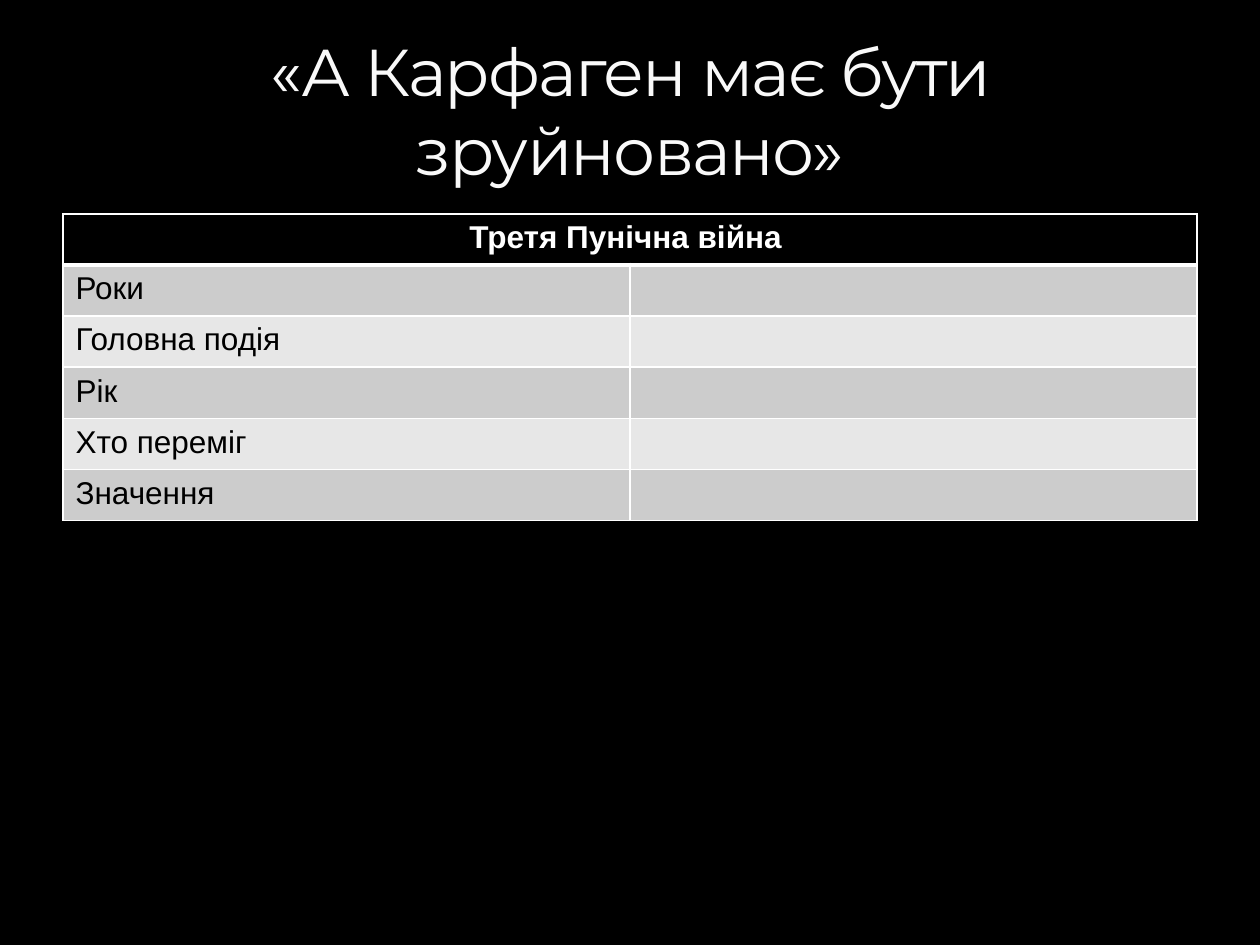
from dataclasses import dataclass

from lxml import etree
from pptx import Presentation
from pptx.dml.color import RGBColor
from pptx.enum.text import MSO_ANCHOR, PP_ALIGN
from pptx.oxml.ns import qn
from pptx.util import Emu, Pt

BOTTOM = MSO_ANCHOR.BOTTOM
LEFT, CENTER = PP_ALIGN.LEFT, PP_ALIGN.CENTER
EMU_PER_PX = 914400 / 126
BLANK_LAYOUT = 6


@dataclass(frozen=True)
class Theme:
    background: str = "000000"
    title: str = "F9F9F9"
    header_text: str = "FFFFFF"
    body_text: str = "000000"
    bands: tuple[str, str] = ("CCCCCC", "E7E7E7")
    border: str = "FFFFFF"
    title_font: str = "Montserrat"
    table_font: str = "Arial"
    title_size: float = 37.8
    table_size: float = 18
    thin_border: float = 1
    thick_border: float = 3


@dataclass(frozen=True)
class Box:
    left: int
    top: int
    width: int
    height: int

    def emu(self) -> tuple[Emu, ...]:
        return tuple(px(n) for n in (self.left, self.top, self.width, self.height))


THEME = Theme()
TITLE_BOX = Box(63, 21, 1134, 174)
TABLE_BOX = Box(63, 214, 1134, 306)
TITLE = "«А Карфаген має бути зруйновано»"
HEADER = "Третя Пунічна війна "
ROW_LABELS = ("Роки", "Головна подія", "Рік", "Хто переміг", "Значення")


def px(length: int) -> Emu:
    return Emu(round(length * EMU_PER_PX))


def write_text(text_frame, text: str, *, font: str, size: float, color: str,
               bold: bool = False, align=LEFT, spacing: float = 0) -> None:
    paragraph = text_frame.paragraphs[0]
    paragraph.alignment = align
    run = paragraph.add_run()
    run.text = text
    run.font.name = font
    run.font.size = Pt(size)
    run.font.bold = bold
    run.font.color.rgb = RGBColor.from_string(color)
    if spacing:
        run.font._element.set("spc", str(round(spacing * 100)))


def style_cell(cell, fill: str, top: float, bottom: float) -> None:
    """Give a cell its borders, widths in points, and then its fill."""
    properties = cell._tc.get_or_add_tcPr()
    widths = {"a:lnL": THEME.thin_border, "a:lnR": THEME.thin_border,
              "a:lnT": top, "a:lnB": bottom}
    for tag, width in widths.items():
        line = etree.SubElement(properties, qn(tag), w=str(Pt(width)))
        solid = etree.SubElement(line, qn("a:solidFill"))
        etree.SubElement(solid, qn("a:srgbClr"), val=THEME.border)
    cell.fill.solid()
    cell.fill.fore_color.rgb = RGBColor.from_string(fill)


def add_title(slide) -> None:
    text_frame = slide.shapes.add_textbox(*TITLE_BOX.emu()).text_frame
    text_frame.word_wrap = True
    text_frame.vertical_anchor = BOTTOM
    write_text(text_frame, TITLE, font=THEME.title_font, size=THEME.title_size,
               color=THEME.title, align=CENTER, spacing=-1)


def add_war_table(slide) -> None:
    table = slide.shapes.add_table(len(ROW_LABELS) + 1, 2, *TABLE_BOX.emu()).table
    table.cell(0, 0).merge(table.cell(0, 1))
    for cell in table.rows[0].cells:
        style_cell(cell, THEME.background, THEME.thin_border, THEME.thick_border)
    write_text(table.cell(0, 0).text_frame, HEADER, font=THEME.table_font,
               size=THEME.table_size, color=THEME.header_text, bold=True, align=CENTER)

    for index, label in enumerate(ROW_LABELS):
        top = THEME.thin_border if index else THEME.thick_border
        for cell in table.rows[index + 1].cells:
            style_cell(cell, THEME.bands[index % 2], top, THEME.thin_border)
        write_text(table.cell(index + 1, 0).text_frame, label, font=THEME.table_font,
                   size=THEME.table_size, color=THEME.body_text)


def main() -> None:
    presentation = Presentation()
    presentation.slide_width = px(1260)
    presentation.slide_height = px(945)
    slide = presentation.slides.add_slide(presentation.slide_layouts[BLANK_LAYOUT])
    background = slide.background.fill
    background.solid()
    background.fore_color.rgb = RGBColor.from_string(THEME.background)
    add_war_table(slide)
    add_title(slide)
    presentation.save("out.pptx")


if __name__ == "__main__":
    main()
